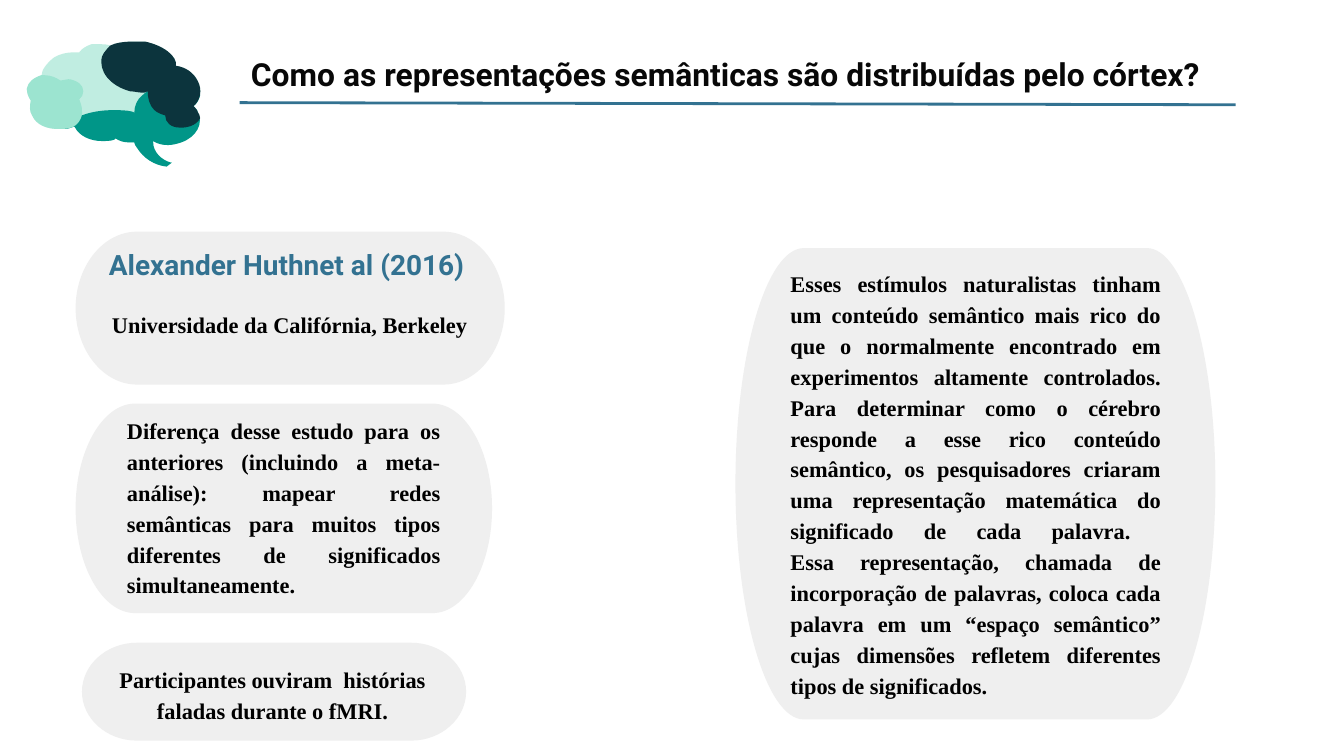
"""Build a slide on how semantic representations are distributed over the cortex."""
from dataclasses import dataclass

from lxml.etree import SubElement
from pptx import Presentation
from pptx.dml.color import RGBColor
from pptx.enum.shapes import MSO_CONNECTOR as Connector
from pptx.enum.text import MSO_ANCHOR as Anchor, PP_ALIGN as Align
from pptx.oxml.ns import qn
from pptx.util import Cm, Pt


@dataclass(frozen=True)
class Theme:
    accent: str = "337291"
    heading: str = "080808"
    body: str = "000000"
    card: str = "EFEFEF"
    mint: str = "9CE4D0"
    teal: str = "009688"
    navy: str = "0C343D"
    heading_font: str = "Roboto"
    body_font: str = "Times New Roman"
    title_size: int = 17
    author_size: int = 15
    body_size: int = 12
    body_spacing: float = 1.15
    inset: float = 0.25


THEME = Theme()
BRAIN_UNIT = 0.0254
ARC = 0.45

FOREHEAD = [(99, 31), (92, 31, 86, 32, 82, 34)]
FACE = [
    (147, 82, 145, 80, 144, 79), (149, 75, 151, 67, 147, 60),
    (144, 54, 138, 50, 131, 49), (132, 42, 122, 34, 108, 31),
    (105, 31, 102, 31, 99, 31),
]
NAPE = [
    (25, 58, 21, 61, 20, 66), (20, 69, 21, 72, 23, 75),
    (22, 79, 22, 83, 24, 86), (27, 93, 35, 96, 43, 96),
    (47, 96, 50, 96, 53, 95), (54, 95, 55, 94, 55, 94),
]
TAIL = [
    (56, 94, 56, 95, 56, 95), (59, 101, 67, 105, 76, 105),
    (79, 105, 82, 105, 85, 104), (85, 103, 86, 103, 86, 103),
    (89, 105, 92, 106, 96, 106), (97, 106, 98, 106, 100, 106),
    (100, 107, 101, 109, 102, 110), (107, 118, 115, 123, 124, 124),
    (128, 121), (127, 121, 127, 121, 127, 121),
    (120, 119, 114, 113, 114, 106), (114, 105),
    (117, 107, 121, 108, 125, 108), (128, 108, 132, 107, 135, 106),
    (146, 102, 152, 92, 147, 83),
]
WHOLE = FOREHEAD + [
    (80, 33, 77, 33, 74, 33), (72, 33, 70, 33, 68, 33),
    (65, 34, 61, 36, 59, 39), (58, 39, 57, 39, 55, 39),
    (50, 39, 45, 40, 40, 43), (35, 47, 31, 52, 31, 56),
] + NAPE + TAIL + FACE
STEM = [
    (125, 64), (118, 64, 111, 66, 106, 71), (102, 74, 100, 79, 100, 84),
    (100, 84, 99, 83, 98, 83), (94, 82, 89, 82, 84, 82),
    (68, 82, 53, 87, 46, 96), (48, 96, 51, 96, 53, 95),
    (54, 95, 55, 94, 55, 94),
] + TAIL + FACE[:1] + [(147, 77, 148, 74, 149, 71), (142, 67, 133, 64, 125, 64)]
FRONT = FOREHEAD + [
    (82, 34, 77, 39, 76, 42), (73, 53, 82, 64, 97, 68),
    (100, 68, 103, 69, 106, 69), (107, 69, 109, 69, 110, 68), (110, 68),
    (110, 73, 111, 78, 115, 82), (117, 84, 120, 85, 123, 86),
    (123, 91, 127, 95, 134, 95), (134, 95, 135, 95, 135, 95),
    (146, 95, 149, 88, 149, 88), (149, 86, 148, 85, 147, 83),
] + FACE
BACK = [(33, 56), (33, 56, 31, 56, 31, 56)] + NAPE + [
    (55, 94, 55, 94, 55, 94), (56, 94, 62, 89, 61, 82),
    (61, 79, 60, 77, 59, 74), (63, 71, 63, 65, 59, 62),
    (56, 60, 53, 59, 51, 59), (49, 59, 47, 60, 45, 60),
    (42, 58, 38, 56, 33, 56),
]


def add_outline(shapes, outline, color, opacity=None, unit=1):
    """Add a filled outline of line ends (2 numbers) and cubic curves (6 numbers)."""
    segments = [[Cm(value * unit) for value in segment] for segment in outline]
    builder = shapes.build_freeform(*segments[0])
    builder.add_line_segments([segment[-2:] for segment in segments[1:]])
    shape = builder.convert_to_shape()
    lines = list(shape._element.iter(qn("a:lnTo")))
    for line, segment in zip(lines, segments[1:]):
        if len(segment) == 6:
            bend(line, segment, shape.left, shape.top)
    shape.shadow.inherit = False
    shape.fill.solid()
    shape.fill.fore_color.rgb = RGBColor.from_string(color)
    shape.line.fill.background()
    if opacity:
        color_element = shape._element.spPr.find(qn("a:solidFill"))[0]
        SubElement(color_element, qn("a:alpha"), val=str(opacity * 1000))


def bend(line, segment, left, top):
    """Replace a straight path segment with a cubic curve."""
    curve = line.makeelement(qn("a:cubicBezTo"))
    for x, y in zip(segment[::2], segment[1::2]):
        SubElement(curve, qn("a:pt"), x=str(x - left), y=str(y - top))
    line.getparent().replace(line, curve)


def add_brain(slide):
    """Add the brain as a group of its whole outline and three lobes."""
    group = slide.shapes.add_group_shape()
    lobes = ((WHOLE, THEME.mint, 63), (STEM, THEME.teal, None),
             (FRONT, THEME.navy, None), (BACK, THEME.mint, None))
    for outline, color, opacity in lobes:
        add_outline(group.shapes, outline, color, opacity, BRAIN_UNIT)


def add_card(slide, left, top, width, height):
    """Add a card whose sides are half ellipses, each a seventh of its width."""
    radius, half = width / 7, height / 2
    right, bottom, middle = left + width, top + height, top + half
    inner_left, inner_right = left + radius, right - radius
    dx, dy = radius * ARC, half * ARC
    add_outline(slide.shapes, [
        (inner_left, top),
        (left + dx, top, left, top + dy, left, middle),
        (left, bottom - dy, left + dx, bottom, inner_left, bottom),
        (inner_right, bottom),
        (right - dx, bottom, right, bottom - dy, right, middle),
        (right, top + dy, right - dx, top, inner_right, top),
    ], THEME.card)


def add_text(slide, box, text, size=THEME.body_size, font=THEME.body_font,
             color=THEME.body, align=Align.CENTER, spacing=THEME.body_spacing,
             anchor=Anchor.MIDDLE):
    """Add a bold one-paragraph text box."""
    frame = slide.shapes.add_textbox(*map(Cm, box)).text_frame
    frame.word_wrap = True
    frame.vertical_anchor = anchor
    frame.margin_left = frame.margin_right = Cm(THEME.inset)
    frame.margin_top = frame.margin_bottom = Cm(THEME.inset)
    paragraph = frame.paragraphs[0]
    paragraph.text = text
    paragraph.alignment = align
    paragraph.line_spacing = spacing
    paragraph.font.name = font
    paragraph.font.size = Pt(size)
    paragraph.font.bold = True
    paragraph.font.color.rgb = RGBColor.from_string(color)


def add_rule(slide, *ends):
    """Add the accent line under the title."""
    line = slide.shapes.add_connector(Connector.STRAIGHT, *map(Cm, ends))
    line.line.color.rgb = RGBColor.from_string(THEME.accent)
    line.line.width = Pt(1.5)
    SubElement(line._element.spPr, qn("a:effectLst"))


def main():
    """Assemble and save the slide."""
    presentation = Presentation()
    presentation.slide_width, presentation.slide_height = Cm(25.4), Cm(14.29)
    slide = presentation.slides.add_slide(presentation.slide_layouts[6])

    add_brain(slide)
    add_text(slide, (3.18, 0.79, 21.08, 1.6),
             "Como as representações semânticas são distribuídas pelo córtex?",
             THEME.title_size, THEME.heading_font, THEME.heading,
             spacing=1.0, anchor=Anchor.TOP)
    add_rule(slide, 4.53, 1.94, 23.35, 1.98)

    for card in ((1.55, 12.15, 7.26, 1.85), (1.43, 7.63, 7.87, 3.96),
                 (1.43, 4.38, 8.11, 2.89), (13.9, 4.69, 9.07, 8.91)):
        add_card(slide, *card)

    add_text(slide, (2.15, 7.58, 6.43, 3.96),
             "Diferença desse estudo para os anteriores (incluindo a meta-análise): "
             "mapear redes semânticas para muitos tipos diferentes de significados "
             "simultaneamente.", align=Align.JUSTIFY)
    add_text(slide, (1.6, 4.4, 7.77, 1.19), "Alexander Huthnet al (2016) ",
             THEME.author_size, THEME.heading_font, THEME.accent, spacing=1.0)
    add_text(slide, (1.69, 12.18, 6.93, 1.85),
             "Participantes ouviram  histórias faladas durante o fMRI.")
    add_text(slide, (14.69, 4.67, 7.51, 8.9),
             "Esses estímulos naturalistas tinham um conteúdo semântico mais rico do "
             "que o normalmente encontrado em experimentos altamente controlados. Para "
             "determinar como o cérebro responde a esse rico conteúdo semântico, os "
             "pesquisadores criaram uma representação matemática do significado de cada "
             "palavra. \vEssa representação, chamada de incorporação de palavras, coloca "
             "cada palavra em um “espaço semântico” cujas dimensões refletem diferentes "
             "tipos de significados.", align=Align.JUSTIFY)
    add_text(slide, (1.85, 5.59, 7.26, 1.02), "Universidade da Califórnia, Berkeley")

    presentation.save("out.pptx")


if __name__ == "__main__":
    main()
